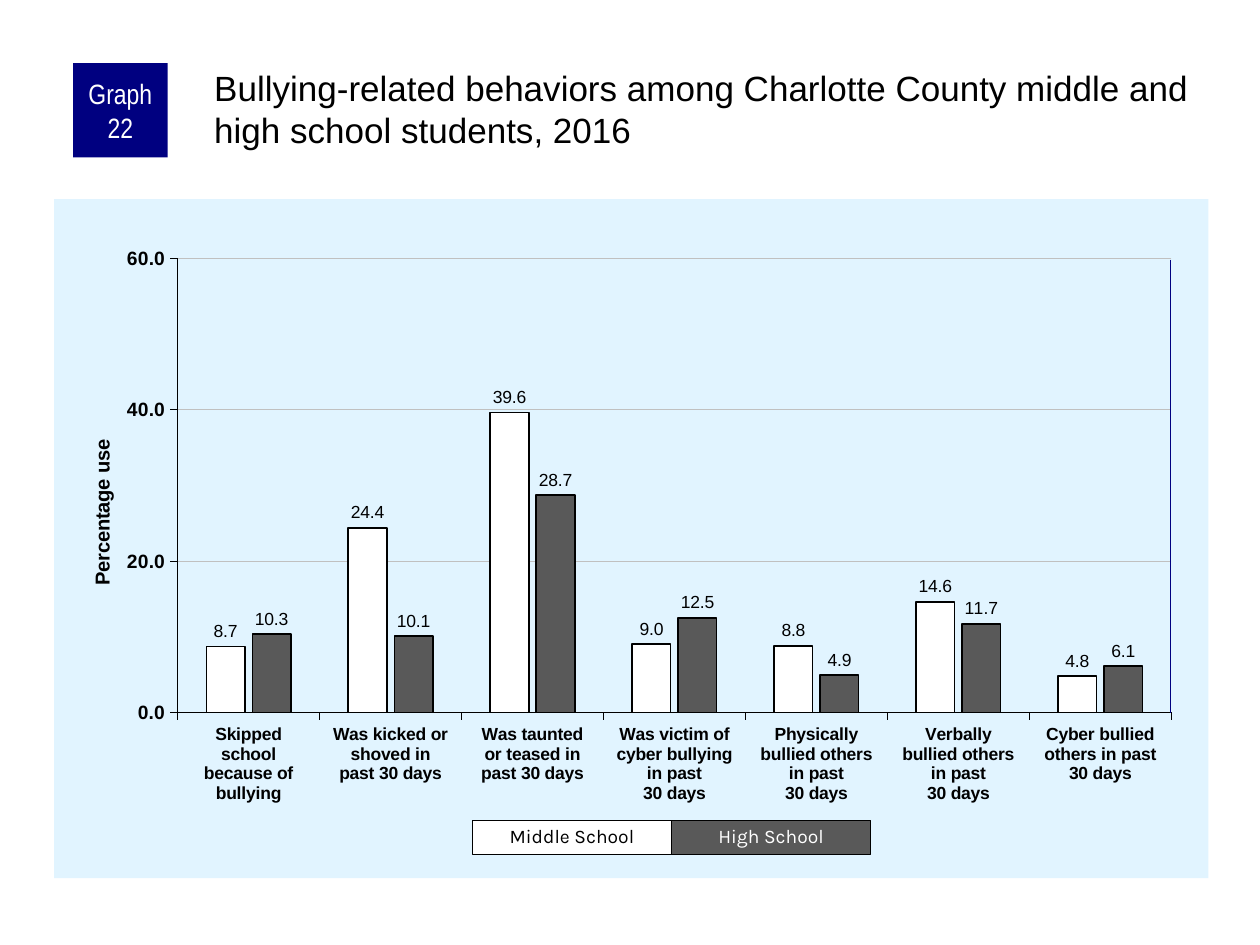
from dataclasses import dataclass

from lxml.etree import SubElement
from pptx import Presentation
from pptx.chart.data import CategoryChartData
from pptx.dml.color import RGBColor
from pptx.enum.chart import XL_CHART_TYPE as ChartType
from pptx.enum.chart import XL_LABEL_POSITION as LabelPosition
from pptx.enum.chart import XL_TICK_MARK as TickMark
from pptx.enum.shapes import MSO_CONNECTOR as Connector
from pptx.enum.shapes import MSO_SHAPE as Shape
from pptx.enum.text import MSO_ANCHOR as Anchor
from pptx.enum.text import PP_ALIGN as Align
from pptx.oxml import parse_xml
from pptx.oxml.ns import nsdecls, qn
from pptx.util import Inches, Pt


@dataclass(frozen=True)
class Theme:
    black: str = "000000"
    white: str = "FFFFFF"
    navy: str = "000080"
    gray: str = "595959"
    panel: str = "E1F4FF"
    grid: str = "C0C0C0"
    sans: str = "Arial"
    narrow: str = "Arial Narrow"
    legend: str = "Karla"
    title_size: float = 20
    badge_size: float = 16
    axis_title_size: float = 11.5
    value_size: float = 11
    label_size: float = 10
    legend_size: float = 11


@dataclass(frozen=True)
class School:
    name: str
    rates: tuple
    fill: str
    ink: str


@dataclass(frozen=True)
class Box:
    left: float
    top: float
    width: float
    height: float

    def emu(self) -> tuple:
        return tuple(map(Inches, (self.left, self.top, self.width, self.height)))


THEME = Theme()
SCHOOLS = (
    School("Middle School", (8.7, 24.4, 39.6, 9.0, 8.8, 14.6, 4.8), THEME.white, THEME.black),
    School("High School", (10.3, 10.1, 28.7, 12.5, 4.9, 11.7, 6.1), THEME.gray, THEME.white),
)
BEHAVIORS = (
    "Skipped\nschool\nbecause of\nbullying",
    "Was kicked or\nshoved in\npast 30 days",
    "Was taunted\nor teased in\npast 30 days",
    "Was victim of\ncyber bullying\nin past\n30 days",
    "Physically\nbullied others\nin past\n30 days",
    "Verbally\nbullied others\nin past\n30 days",
    "Cyber bullied\nothers in past\n30 days",
)
PANEL = Box(0.43, 1.58, 9.16, 5.39)


def style_font(font, face: str, size: float, color: str, bold: bool = False) -> None:
    font.name, font.size, font.bold = face, Pt(size), bold
    font.color.rgb = RGBColor.from_string(color)


def style_line(line, color: str, width: float) -> None:
    line.color.rgb = RGBColor.from_string(color)
    line.width = Pt(width)


def style_fill(fill, color: str) -> None:
    fill.solid()
    fill.fore_color.rgb = RGBColor.from_string(color)


def add_block(slide, box: Box, text: str, fill: str, ink: str, face: str, size: float):
    block = slide.shapes.add_shape(Shape.RECTANGLE, *box.emu())
    block.shadow.inherit = False
    style_fill(block.fill, fill)
    frame = block.text_frame
    frame.word_wrap, frame.vertical_anchor = True, Anchor.MIDDLE
    paragraph = frame.paragraphs[0]
    paragraph.alignment = Align.CENTER
    run = paragraph.add_run()
    run.text = text
    style_font(run.font, face, size, ink)
    return block


def set_layout(parent, index: int, target: str, **sizes: float) -> None:
    for old in parent.findall(qn("c:layout")):
        parent.remove(old)
    modes = "".join(f'<c:{axis}Mode val="edge"/>' for axis in "xy")
    values = "".join(f'<c:{key} val="{value}"/>' for key, value in sizes.items())
    parent.insert(index, parse_xml(
        f'<c:layout {nsdecls("c")}><c:manualLayout>{target}{modes}{values}'
        "</c:manualLayout></c:layout>"))


def style_axis(axis, size: float) -> None:
    axis.major_tick_mark, axis.minor_tick_mark = TickMark.OUTSIDE, TickMark.NONE
    style_font(axis.tick_labels.font, THEME.sans, size, THEME.black, True)
    style_line(axis.format.line, THEME.black, 0.25)


def style_value_axis(axis) -> None:
    style_axis(axis, THEME.value_size)
    axis.minimum_scale, axis.maximum_scale, axis.major_unit = 0, 60, 20
    axis.tick_labels.number_format = "0.0"
    axis.tick_labels.number_format_is_linked = False
    style_line(axis.major_gridlines.format.line, THEME.grid, 0.25)
    frame = axis.axis_title.text_frame
    run = frame.paragraphs[0].add_run()
    run.text = "Percentage use"
    style_font(run.font, THEME.sans, THEME.axis_title_size, THEME.black, True)
    title = axis.axis_title.format.element if hasattr(axis.axis_title.format, "element") else None
    title = axis.axis_title.element if title is None else title
    title.find(".//" + qn("a:bodyPr")).set("rot", "-5400000")
    set_layout(title, 1, "", x=0.027, y=0.349)


def style_bars(bars, school: School) -> None:
    style_fill(bars.format.fill, school.fill)
    style_line(bars.format.line, THEME.black, 1)
    labels = bars.data_labels
    labels.show_value, labels.position = True, LabelPosition.OUTSIDE_END
    labels.number_format, labels.number_format_is_linked = "0.0", False
    style_font(labels.font, THEME.sans, THEME.label_size, THEME.black)


def add_rate_chart(slide) -> None:
    rates = CategoryChartData(number_format="0.0")
    rates.categories = BEHAVIORS
    for school in SCHOOLS:
        rates.add_series(school.name, school.rates)
    chart = slide.shapes.add_chart(ChartType.COLUMN_CLUSTERED, *PANEL.emu(), rates).chart
    chart.has_legend = chart.has_title = False
    style_font(chart.font, THEME.sans, THEME.axis_title_size, THEME.black)
    space = chart.element
    space.find(qn("c:chart")).addnext(parse_xml(
        f'<c:spPr {nsdecls("c", "a")}><a:solidFill><a:srgbClr val="{THEME.panel}"/>'
        "</a:solidFill><a:ln><a:noFill/></a:ln></c:spPr>"))
    set_layout(space.find(".//" + qn("c:plotArea")), 0, '<c:layoutTarget val="inner"/>',
               x=0.107, y=0.087, w=0.861, h=0.669)
    style_axis(chart.category_axis, THEME.label_size)
    style_value_axis(chart.value_axis)
    plot = chart.plots[0]
    plot.gap_width, plot.overlap, plot.vary_by_categories = 150, -20, False
    for bars, school in zip(plot.series, SCHOOLS):
        style_bars(bars, school)


def add_right_edge(slide) -> None:
    ends = map(Inches, (9.29, 2.06, 9.29, 5.66))
    edge = slide.shapes.add_connector(Connector.STRAIGHT, *ends)
    style_line(edge.line, THEME.navy, 1)
    SubElement(edge.element.spPr, qn("a:effectLst"))


def add_heading(slide) -> None:
    heading = slide.shapes.title
    heading.left, heading.top, heading.width, heading.height = Box(1.67, 0.5, 7.92, 0.83).emu()
    frame = heading.text_frame
    frame.word_wrap, frame.vertical_anchor = True, Anchor.TOP
    frame.margin_left = frame.margin_top = Inches(0.03)
    frame.margin_right = frame.margin_bottom = 0
    frame.paragraphs[0].alignment = Align.LEFT
    run = frame.paragraphs[0].add_run()
    run.text = "Bullying-related behaviors among Charlotte County middle and high school students, 2016"
    style_font(run.font, THEME.sans, THEME.title_size, THEME.black)


def main() -> None:
    """Build the slide of bullying rates by school level."""
    deck = Presentation()
    deck.slide_width, deck.slide_height = Inches(10), Inches(7.5)
    slide = deck.slides.add_slide(deck.slide_layouts[5])
    add_rate_chart(slide)
    add_right_edge(slide)
    badge = add_block(slide, Box(0.58, 0.5, 0.75, 0.75), "Graph 22",
                      THEME.navy, THEME.white, THEME.narrow, THEME.badge_size)
    badge.line.fill.background()
    badge.text_frame.margin_left = badge.text_frame.margin_right = Inches(0.05)
    badge.text_frame.margin_top = badge.text_frame.margin_bottom = 0
    add_heading(slide)
    for column, school in enumerate(SCHOOLS):
        key = add_block(slide, Box(3.75 + 1.58 * column, 6.51, 1.58, 0.27), school.name,
                        school.fill, school.ink, THEME.legend, THEME.legend_size)
        style_line(key.line, THEME.black, 0.75)
        key.text_frame.paragraphs[0].line_spacing = 0.9
    deck.save("out.pptx")


if __name__ == "__main__":
    main()
